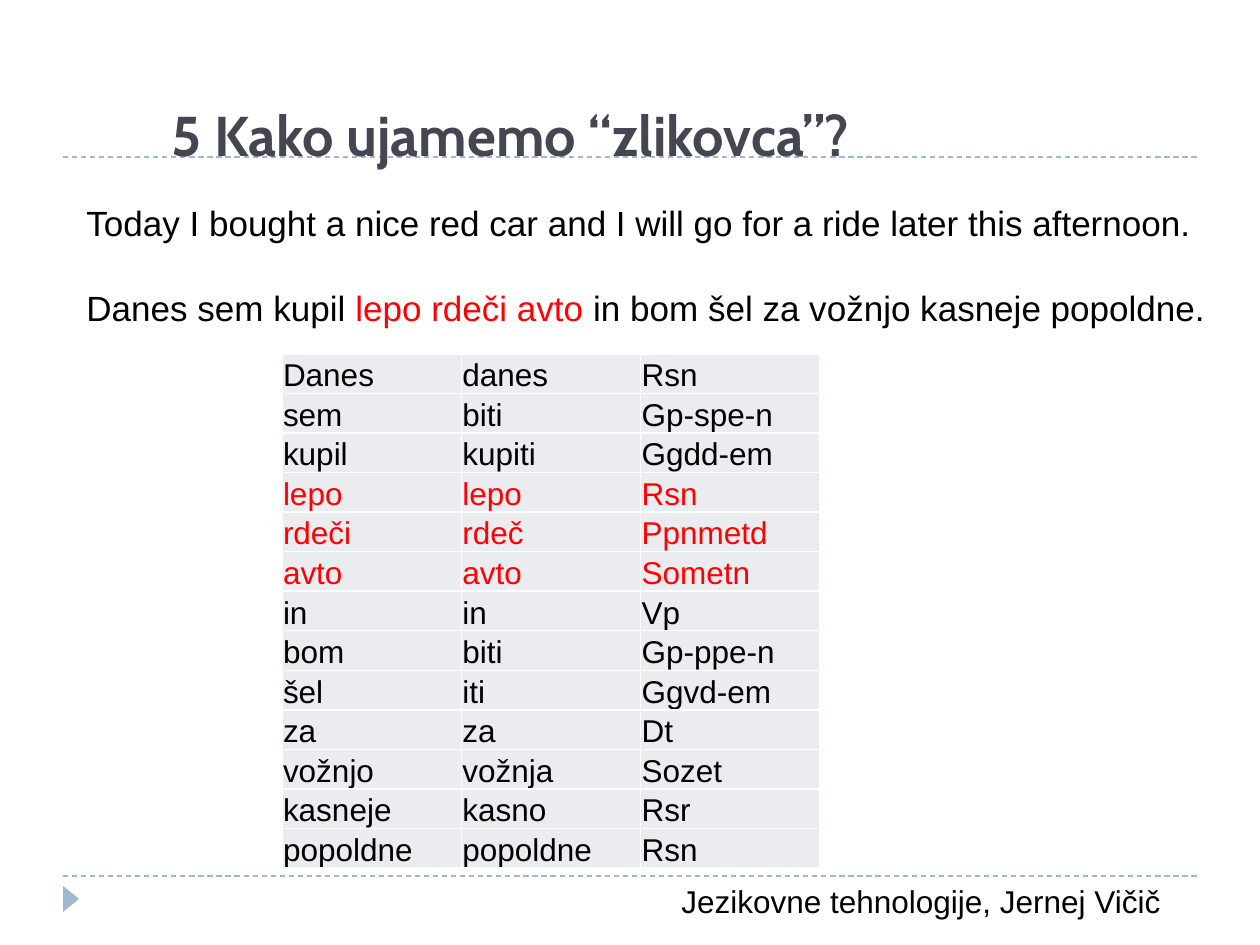
import pptx
import pptx.dml.color
import pptx.enum.dml
import pptx.enum.shapes
import pptx.enum.text
import pptx.oxml
import pptx.oxml.ns
import pptx.util
import lxml.etree

PX = 914400 // 126
COLORS = {"text": "000000", "mark": "FF0000", "title": "464653",
          "accent": "9FB8CD", "cell": "EBECF0", "border": "FFFFFF"}


def style(span, size, color="text", font="Arial", bold=False):
    span.font.size = pptx.util.Pt(size)
    span.font.name = font
    span.font.bold = bold
    span.font.color.rgb = pptx.dml.color.RGBColor.from_string(COLORS[color])


def add_box(left, top, width, height, wrap=True):
    box = page.shapes.add_textbox(left * PX, top * PX, width * PX, height * PX)
    box.text_frame.word_wrap = wrap
    return box.text_frame


deck = pptx.Presentation()
deck.slide_width = pptx.util.Inches(10)
deck.slide_height = pptx.util.Inches(7.5)
page = deck.slides.add_slide(deck.slide_layouts[6])
accent = pptx.dml.color.RGBColor.from_string(COLORS["accent"])

# Dashed rules above the footer and under the title
for y in (876, 157):
    rule = page.shapes.add_connector(
        pptx.enum.shapes.MSO_CONNECTOR.STRAIGHT, 63 * PX, y * PX, 1197 * PX, y * PX)
    rule.line.color.rgb = accent
    rule.line.width = pptx.util.Pt(0.75)
    rule.line.dash_style = pptx.enum.dml.MSO_LINE.DASH
    lxml.etree.SubElement(rule._element.spPr, pptx.oxml.ns.qn("a:effectLst"))

# Footer marker and text
marker = page.shapes.add_shape(
    pptx.enum.shapes.MSO_SHAPE.ISOSCELES_TRIANGLE, 58 * PX, 891 * PX, 26 * PX, 16 * PX)
marker.rotation = 90
marker.shadow.inherit = False
marker.fill.solid()
marker.fill.fore_color.rgb = accent
marker.line.fill.background()

footer = add_box(669, 876, 509, 50, wrap=False)
footer.text = "Jezikovne tehnologije, Jernej Vičič"
style(footer.paragraphs[0].runs[0], 18)

# Title
title = add_box(159, 29, 1074, 145)
title.vertical_anchor = pptx.enum.text.MSO_ANCHOR.BOTTOM
title.text = "5 Kako ujamemo “zlikovca”?"
style(title.paragraphs[0].runs[0], 32, "title", "Cabin", bold=True)

# English sentence and its translation
sentences = add_box(74, 195, 1158, 140)
sentences.text = "Today I bought a nice red car and I will go for a ride later this afternoon."
style(sentences.paragraphs[0].runs[0], 20)
para = sentences.add_paragraph()
para.space_before = pptx.util.Pt(25)
for text, color in (("Danes sem kupil ", "text"), ("lepo rdeči avto ", "mark"),
                    ("in bom šel za vožnjo kasneje popoldne.", "text")):
    span = para.add_run()
    span.text = text
    style(span, 20, color)

# Word, lemma and tag table
WORDS = [
    ("Danes", "danes", "Rsn"),
    ("sem", "biti", "Gp-spe-n"),
    ("kupil", "kupiti", "Ggdd-em"),
    ("lepo", "lepo", "Rsn"),
    ("rdeči", "rdeč", "Ppnmetd"),
    ("avto", "avto", "Sometn"),
    ("in", "in", "Vp"),
    ("bom", "biti", "Gp-ppe-n"),
    ("šel", "iti", "Ggvd-em"),
    ("za", "za", "Dt"),
    ("vožnjo", "vožnja", "Sozet"),
    ("kasneje", "kasno", "Rsr"),
    ("popoldne", "popoldne", "Rsn"),
]
MARKED = ("lepo", "rdeči", "avto")
table = page.shapes.add_table(
    len(WORDS), 3, 282 * PX, 354 * PX, 538 * PX, 514 * PX).table
for row, entry in enumerate(WORDS):
    for column, text in enumerate(entry):
        cell = table.cell(row, column)
        cell.text = text
        style(cell.text_frame.paragraphs[0].runs[0], 18,
              "mark" if entry[0] in MARKED else "text")
        cell.vertical_anchor = pptx.enum.text.MSO_ANCHOR.BOTTOM
        cell.margin_left = cell.margin_right = cell.margin_top = PX
        cell.margin_bottom = 0
        # Borders come before the fill in the cell properties
        for side in ("lnL", "lnR", "lnT", "lnB"):
            cell._tc.get_or_add_tcPr().append(pptx.oxml.parse_xml(
                f'<a:{side} {pptx.oxml.ns.nsdecls("a")} w="12700"><a:solidFill>'
                f'<a:srgbClr val="{COLORS["border"]}"/></a:solidFill></a:{side}>'))
        cell.fill.solid()
        cell.fill.fore_color.rgb = pptx.dml.color.RGBColor.from_string(COLORS["cell"])

deck.save("out.pptx")
